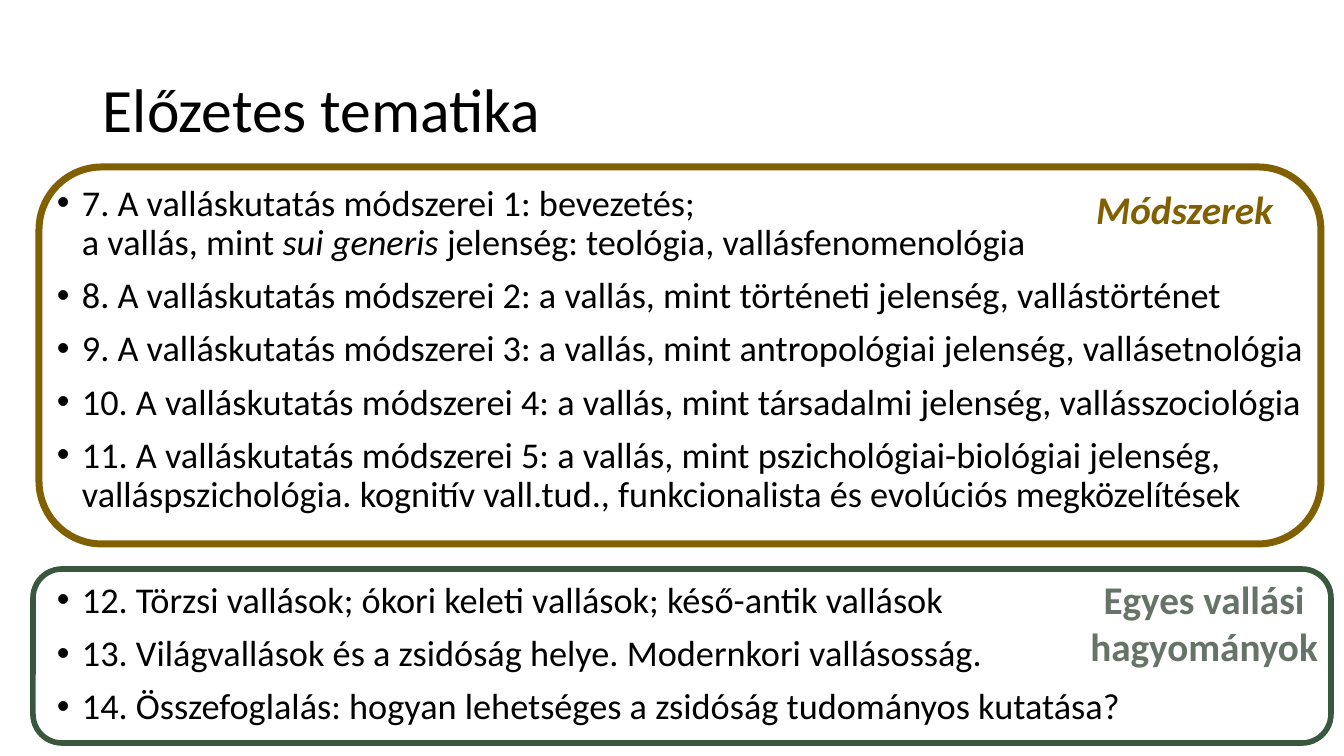
from lxml import etree
from pptx import Presentation
from pptx.dml.color import RGBColor
from pptx.enum.shapes import MSO_SHAPE
from pptx.enum.text import MSO_ANCHOR, PP_ALIGN
from pptx.oxml.ns import qn
from pptx.util import Pt

ROUNDED = MSO_SHAPE.ROUNDED_RECTANGLE
CENTER = PP_ALIGN.CENTER
MIDDLE = MSO_ANCHOR.MIDDLE

EMU_PER_PX = 914400 / 100.8
SLIDE_SIZE = (1344, 756)
FONT = "Calibri"
COLORS = {"text": "000000", "methods": "806000", "border": "39573C", "traditions": "657467"}
INDENT = 25

TITLE = "Előzetes tematika"
TITLE_BOX = (93, 40, 1159, 146)

# Each topic is a list of lines, each line a list of (text, italic) pieces.
METHOD_TOPICS = [
    [[("7. A valláskutatás módszerei 1: bevezetés;", False)],
     [("a vallás, mint ", False), ("sui generis ", True),
      ("jelenség: teológia, vallásfenomenológia", False)]],
    [[("8. A valláskutatás módszerei 2: a vallás, mint történeti jelenség, vallástörténet", False)]],
    [[("9. A valláskutatás módszerei 3: a vallás, mint antropológiai jelenség, vallásetnológia", False)]],
    [[("10. A valláskutatás módszerei 4: a vallás, mint társadalmi jelenség, vallásszociológia", False)]],
    [[("11. A valláskutatás módszerei 5: a vallás, mint pszichológiai-biológiai jelenség, "
       "valláspszichológia. kognitív vall.tud., funkcionalista és evolúciós megközelítések", False)]],
]
TRADITION_TOPICS = [
    [[("12. Törzsi vallások; ókori keleti vallások; késő-antik vallások", False)]],
    [[("13. Világvallások és a zsidóság helye. Modernkori vallásosság.", False)]],
    [[("14. Összefoglalás: hogyan lehetséges a zsidóság tudományos kutatása?", False)]],
]
TOPIC_LISTS = [
    ((47, 180, 1284, 360), METHOD_TOPICS),
    ((47, 577, 1284, 160), TRADITION_TOPICS),
]
FRAMES = [
    ((39, 167, 1282, 377), "methods", 5),
    ((33, 569, 1298, 174), "border", 4),
]
LABELS = [
    ((1072, 180, 225, 57), "Módszerek", "methods", True),
    ((1075, 570, 258, 105), "Egyes vallási hagyományok", "traditions", False),
]


def px(length):
    return round(length * EMU_PER_PX)


def add_text_frame(slide, box):
    text_frame = slide.shapes.add_textbox(*map(px, box)).text_frame
    text_frame.word_wrap = True
    return text_frame


def style_run(run, size, color, bold=False, italic=False):
    run.font.name = FONT
    run.font.size = Pt(size)
    run.font.bold = bold
    run.font.italic = italic
    run.font.color.rgb = RGBColor.from_string(COLORS[color])


def add_bullet(paragraph):
    properties = paragraph._p.get_or_add_pPr()
    properties.set("marL", str(px(INDENT)))
    properties.set("indent", str(-px(INDENT)))
    etree.SubElement(properties, qn("a:buFont")).set("typeface", "Arial")
    etree.SubElement(properties, qn("a:buChar")).set("char", "•")


def add_title(slide):
    text_frame = add_text_frame(slide, TITLE_BOX)
    text_frame.vertical_anchor = MIDDLE
    text_frame.text = TITLE
    paragraph = text_frame.paragraphs[0]
    paragraph.line_spacing = 0.9
    style_run(paragraph.runs[0], 44, "text")


def add_topics(slide, box, topics):
    text_frame = add_text_frame(slide, box)
    for number, lines in enumerate(topics):
        paragraph = text_frame.add_paragraph() if number else text_frame.paragraphs[0]
        paragraph.line_spacing = 0.9
        paragraph.space_before = Pt(10)
        add_bullet(paragraph)
        for line_number, pieces in enumerate(lines):
            if line_number:
                paragraph.add_line_break()
            for text, italic in pieces:
                run = paragraph.add_run()
                run.text = text
                style_run(run, 25.9, "text", italic=italic)


def add_frame(slide, box, color, width):
    shape = slide.shapes.add_shape(ROUNDED, *map(px, box))
    shape.shadow.inherit = False
    shape.fill.background()
    shape.line.color.rgb = RGBColor.from_string(COLORS[color])
    shape.line.width = Pt(width)


def add_label(slide, box, text, color, italic):
    text_frame = add_text_frame(slide, box)
    text_frame.text = text
    paragraph = text_frame.paragraphs[0]
    paragraph.alignment = CENTER
    style_run(paragraph.runs[0], 28, color, bold=True, italic=italic)


def main():
    presentation = Presentation()
    presentation.slide_width, presentation.slide_height = map(px, SLIDE_SIZE)
    slide = presentation.slides.add_slide(presentation.slide_layouts[6])
    add_title(slide)
    for topic_list in TOPIC_LISTS:
        add_topics(slide, *topic_list)
    for frame in FRAMES:
        add_frame(slide, *frame)
    for label in LABELS:
        add_label(slide, *label)
    presentation.save("out.pptx")


if __name__ == "__main__":
    main()
